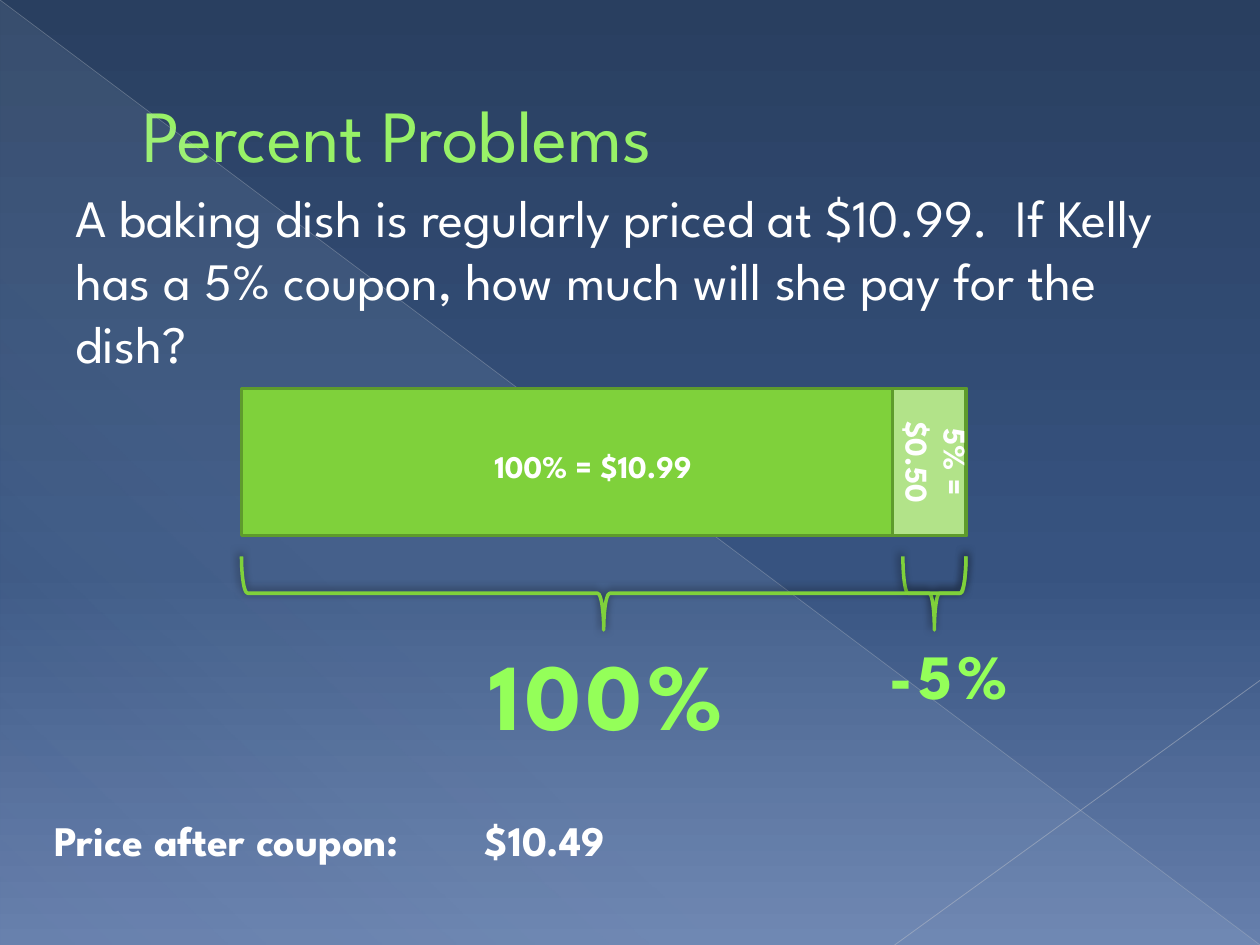
from dataclasses import dataclass

from lxml import etree
from pptx import Presentation
from pptx.dml.color import RGBColor
from pptx.enum.shapes import MSO_CONNECTOR, MSO_SHAPE
from pptx.enum.text import MSO_ANCHOR, PP_ALIGN
from pptx.oxml.ns import qn
from pptx.util import Emu, Inches, Pt

RECT = MSO_SHAPE.RECTANGLE
BRACE = MSO_SHAPE.LEFT_BRACE
WEDGE = MSO_SHAPE.RIGHT_TRIANGLE
LINE = MSO_CONNECTOR.STRAIGHT
LEFT, MID = PP_ALIGN.LEFT, PP_ALIGN.CENTER

FONT = "League Spartan"
WHITE = RGBColor(0xFF, 0xFF, 0xFF)
BLACK = RGBColor(0, 0, 0)
LIME = RGBColor(0x98, 0xF1, 0x67)
MOSS = RGBColor(0x58, 0x91, 0x29)
GREEN = RGBColor(0x7F, 0xD1, 0x3B)
PALE = RGBColor(0xB2, 0xE3, 0x89)
EDGE = RGBColor(0x5E, 0x9B, 0x2C)
MINT = RGBColor(0xF6, 0xFB, 0xF4)
GLOW = RGBColor(0x94, 0xFF, 0x59)
LEAF = RGBColor(0x5B, 0xB6, 0x10)
ICE = RGBColor(0xD6, 0xEC, 0xFF)
GREY = RGBColor(0xB7, 0xBC, 0xC5)
ASH = RGBColor(0xBF, 0xC3, 0xCB)
NAVY = RGBColor(0x29, 0x3F, 0x60)
BLUE = RGBColor(0x37, 0x53, 0x80)
HAZE = RGBColor(0x66, 0x7F, 0xAC)

WIDE, HIGH = Inches(10), Inches(7.5)
COLS, ROWS = 120, 90


@dataclass
class Box:
    col: float
    row: float
    cols: float
    rows: float

    def place(self) -> tuple:
        return (Emu(int(WIDE * self.col / COLS)), Emu(int(HIGH * self.row / ROWS)),
                Emu(int(WIDE * self.cols / COLS)), Emu(int(HIGH * self.rows / ROWS)))


@dataclass
class Label:
    text: str
    box: Box
    size: float
    align: PP_ALIGN = MID
    bold: bool = True
    turn: float = 0
    wrap: bool = True
    fancy: bool = False
    before: float = 0


@dataclass
class Bar:
    box: Box
    color: RGBColor


@dataclass
class Ray:
    start: tuple
    end: tuple
    color: RGBColor
    width: float
    alpha: int


LABELS = [
    Label("A baking dish is regularly priced at $10.99.  If Kelly has a 5% coupon, "
          "how much will she pay for the dish?", Box(6, 17, 108, 60), 30, LEFT, False, before=6),
    Label("100% = $10.99", Box(31, 42, 51, 4.8), 18),
    Label("5% = $0.50", Box(82.2, 39.75, 14, 8.5), 18, turn=90),
    Label("100%", Box(44, 60, 27.5, 12), 54, wrap=False, fancy=True),
    Label("-5%", Box(81, 60, 18.7, 8.5), 36, fancy=True),
    Label("Price after coupon:", Box(4, 77, 72, 6), 24, LEFT),
    Label("$10.49", Box(45, 77, 20, 6), 24, LEFT),
]
BARS = [Bar(Box(23, 37, 69, 14), GREEN), Bar(Box(85, 37, 7, 14), PALE)]
BRACES = [Box(85.5, 53.5, 7, 6), Box(54, 22, 7, 69)]
RAYS = [Ray((0, 0), (1, 1), GREY, 0.39, 35),
        Ray((1, 0.72), (0.71, 1), ASH, 0.47, 45)]


def node(root, tag: str, **attrs):
    return etree.SubElement(root, qn(tag), {k: str(v) for k, v in attrs.items()})


def tint(root, color: RGBColor, alpha: int = 100) -> None:
    item = node(root, "a:srgbClr", val=color)
    if alpha < 100:
        node(item, "a:alpha", val=alpha * 1000)


def blend(stops: list, angle: int):
    grad = etree.Element(qn("a:gradFill"), rotWithShape="1")
    row = node(grad, "a:gsLst")
    for pos, color, alpha in stops:
        tint(node(row, "a:gs", pos=pos * 1000), color, alpha)
    node(grad, "a:lin", ang=angle * 60000, scaled=0)
    return grad


def refill(root, grad) -> None:
    root.replace(root.find(qn("a:solidFill")), grad)


def shade(root, blur: float, dist: float, angle: int):
    effects = root.find(qn("a:effectLst"))
    if effects is None:
        effects = node(root, "a:effectLst")
    drop = node(effects, "a:outerShdw", blurRad=Pt(blur), dist=Pt(dist),
                dir=angle * 60000, algn="ctr", rotWithShape=0)
    tint(drop, BLACK, 50)
    return effects


def border(run, color: RGBColor, width: float) -> None:
    props = run.font._element if hasattr(run.font, "_element") else run._r.get_or_add_rPr()
    line = etree.Element(qn("a:ln"), w=str(Pt(width)))
    tint(node(line, "a:solidFill"), color)
    props.insert(0, line)


def write(para, text: str, size: float, color: RGBColor, bold: bool):
    run = para.add_run()
    run.text = text
    font = run.font
    font.name, font.size, font.bold = FONT, Pt(size), bold
    font.color.rgb = color
    return run


def label(slide, item: Label) -> None:
    box = slide.shapes.add_textbox(*item.box.place())
    box.rotation = item.turn
    frame = box.text_frame
    frame.word_wrap = item.wrap
    para = frame.paragraphs[0]
    para.alignment = item.align
    para.space_before = Pt(item.before)
    run = write(para, item.text, item.size, WHITE, item.bold)
    if item.fancy:
        props = run._r.get_or_add_rPr()
        props.set("spc", "300")
        border(run, MINT, 0.9)
        refill(props, blend([(10, GLOW, 100), (75, LEAF, 100)], 90))
        props.find(qn("a:gradFill")).addnext(shade(props, 2, 1, 90))


def bar(slide, item: Bar) -> None:
    shape = slide.shapes.add_shape(RECT, *item.box.place())
    shape.shadow.inherit = False
    shape.fill.solid()
    shape.fill.fore_color.rgb = item.color
    shape.line.color.rgb = EDGE
    shape.line.width = Pt(2)


def brace(slide, box: Box) -> None:
    shape = slide.shapes.add_shape(BRACE, *box.place())
    shape.rotation = 270
    shape.shadow.inherit = False
    shape.fill.background()
    shape.line.color.rgb = GREEN
    shape.line.width = Pt(2)
    shade(shape._element.spPr, 5, 2, 245)


def ray(slide, item: Ray) -> None:
    ends = [Emu(int(side * part)) for point in (item.start, item.end)
            for side, part in zip((WIDE, HIGH), point)]
    line = slide.shapes.add_connector(LINE, *ends)
    line.line.color.rgb = item.color
    line.line.width = Pt(item.width)
    props = line._element.spPr
    node(props.find(".//" + qn("a:srgbClr")), "a:alpha", val=item.alpha * 1000)
    node(props, "a:effectLst")


def scene(slide) -> None:
    slide.background.fill.solid()
    refill(slide.element.find(".//" + qn("p:bgPr")),
           blend([(0, NAVY, 100), (60, BLUE, 100), (100, HAZE, 100)], 90))
    wedge = slide.shapes.add_shape(WEDGE, 0, 0, WIDE, HIGH)
    wedge.shadow.inherit = False
    wedge.fill.solid()
    wedge.line.fill.background()
    refill(wedge._element.spPr, blend([(0, ICE, 10), (70, ICE, 8), (100, ICE, 1)], 133))
    for item in RAYS:
        ray(slide, item)


def head(slide) -> None:
    title = slide.shapes.title
    title.left, title.top, title.width, title.height = Box(6, 3.5, 108, 18.3).place()
    title.text_frame.vertical_anchor = MSO_ANCHOR.MIDDLE
    para = title.text_frame.paragraphs[0]
    para.alignment = LEFT
    para._p.get_or_add_pPr().set("marL", str(Inches(0.53)))
    border(write(para, "Percent Problems", 42, LIME, False), MOSS, 0.5)


def main() -> None:
    deck = Presentation()
    deck.slide_width, deck.slide_height = WIDE, HIGH
    slide = deck.slides.add_slide(deck.slide_layouts[5])
    scene(slide)
    head(slide)
    label(slide, LABELS[0])
    for item, text in zip(BARS, LABELS[1:3]):
        bar(slide, item)
        label(slide, text)
    for box in BRACES:
        brace(slide, box)
    for text in LABELS[3:]:
        label(slide, text)
    deck.save("out.pptx")


if __name__ == "__main__":
    main()
